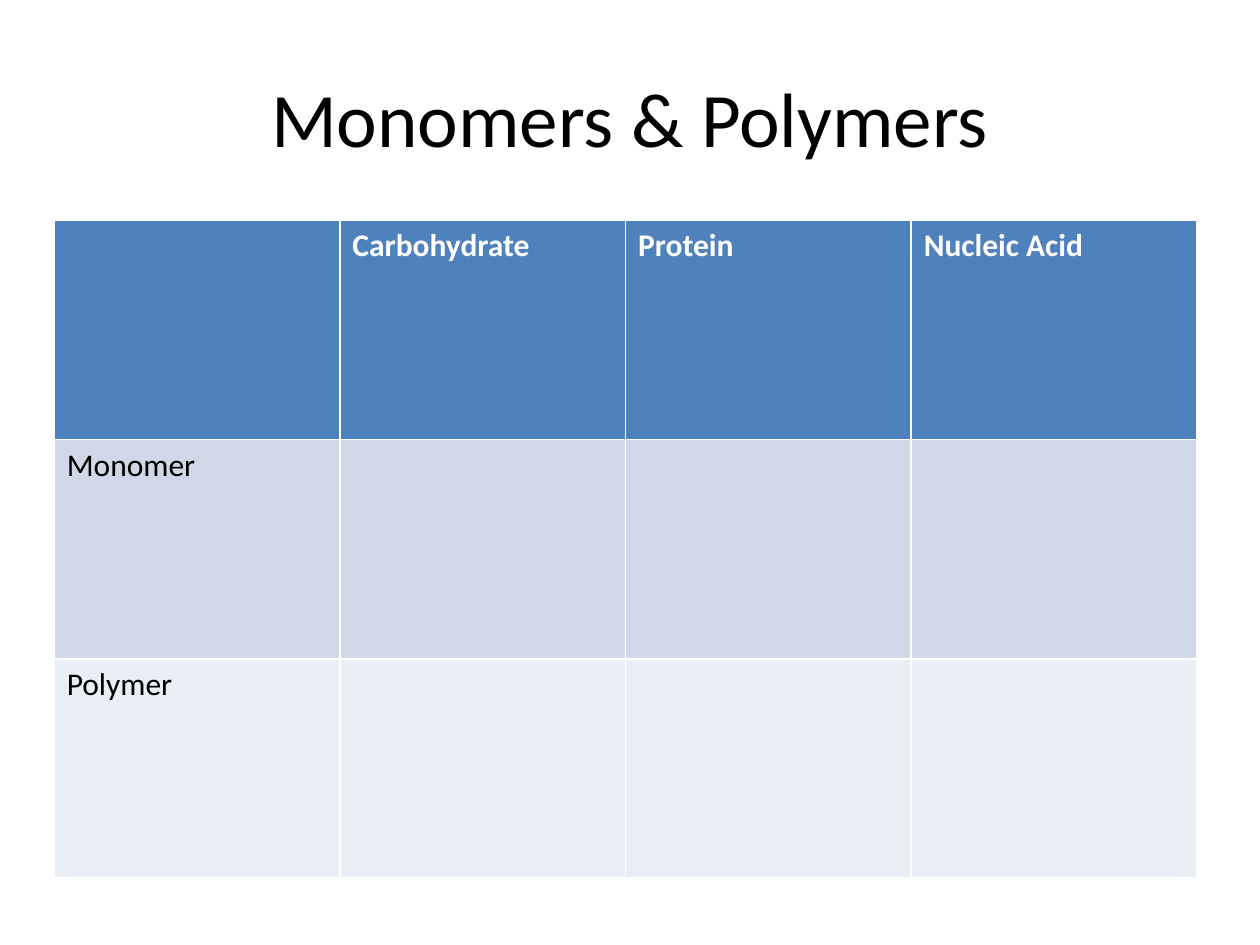
"""Build a slide with a blank comparison table of monomers and polymers."""
from pptx import Presentation
from pptx.dml.color import RGBColor
from pptx.enum.text import MSO_ANCHOR, PP_ALIGN
from pptx.util import Inches, Pt


def style_font(font, size, color, bold=False):
    font.name = "Calibri"
    font.size = Pt(size)
    font.bold = bold
    font.color.rgb = RGBColor.from_string(color)


deck = Presentation()
deck.slide_width, deck.slide_height = Inches(10), Inches(7.5)
slide = deck.slides.add_slide(deck.slide_layouts[5])

title = slide.shapes.title
title.left, title.top = Inches(0.5), Inches(0.3)
title.width, title.height = Inches(9), Inches(1.25)
title.text_frame.text = "Monomers & Polymers"
title.text_frame.vertical_anchor = MSO_ANCHOR.MIDDLE
heading = title.text_frame.paragraphs[0]
heading.alignment = PP_ALIGN.CENTER
style_font(heading.font, 44, "000000")

rows = [
    (["", "Carbohydrate", "Protein", "Nucleic Acid"], "4F81BD", "FFFFFF", True),
    (["Monomer", "", "", ""], "D0D8E8", "000000", False),
    (["Polymer", "", "", ""], "E9EDF4", "000000", False),
]
comparison = slide.shapes.add_table(
    len(rows), 4, Inches(0.43), Inches(1.75), Inches(9.07), Inches(5.22)
).table

for row, (labels, fill, color, bold) in zip(comparison.rows, rows):
    for cell, label in zip(row.cells, labels):
        cell.fill.solid()
        cell.fill.fore_color.rgb = RGBColor.from_string(fill)
        cell.text = label
        style_font(cell.text_frame.paragraphs[0].font, 18, color, bold)

deck.save("out.pptx")
